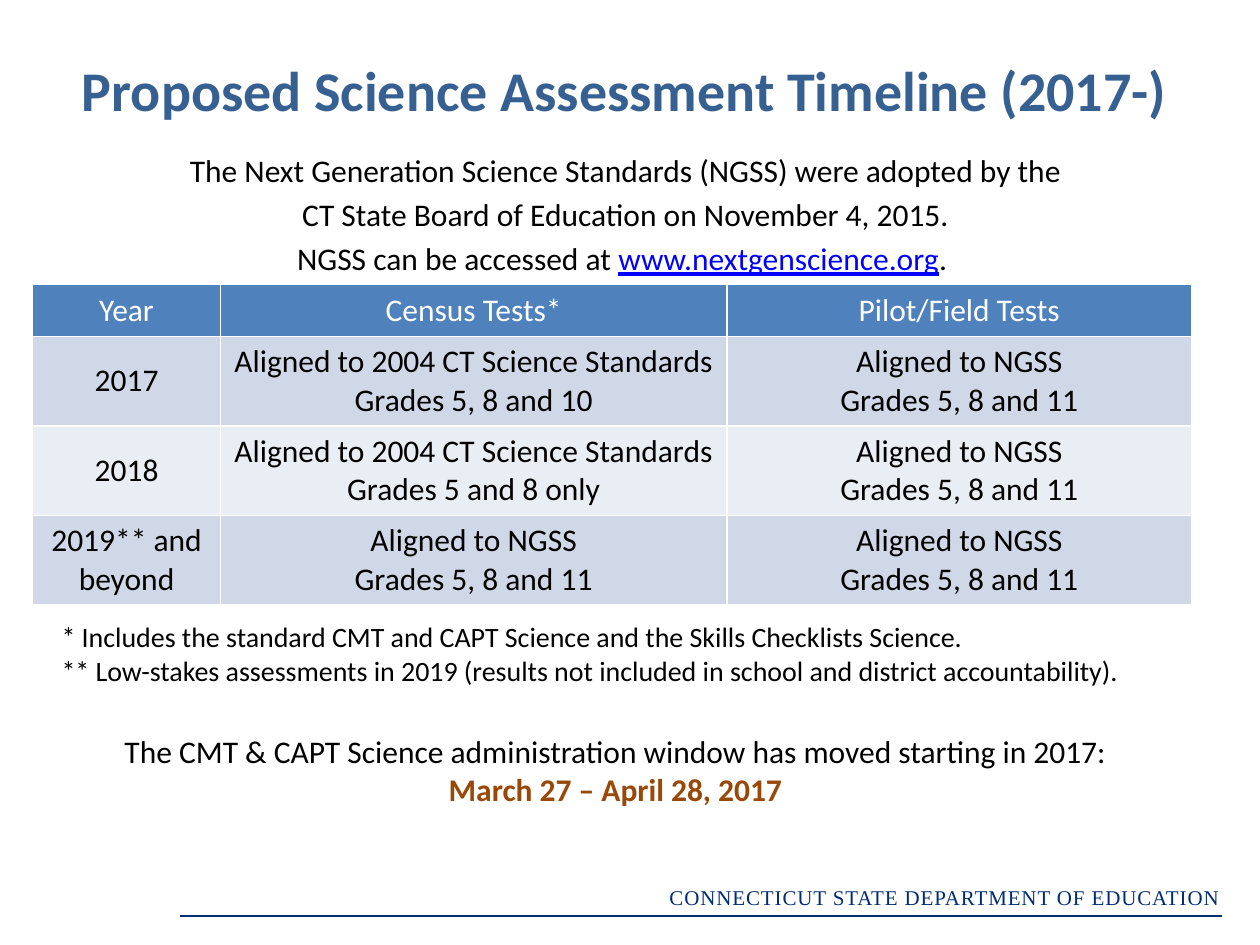
from dataclasses import dataclass

from lxml.etree import SubElement
from pptx import Presentation
from pptx.dml.color import RGBColor
from pptx.enum.shapes import MSO_CONNECTOR
from pptx.enum.text import MSO_ANCHOR, MSO_AUTO_SIZE, PP_ALIGN
from pptx.oxml.ns import qn
from pptx.slide import Slide
from pptx.util import Inches, Pt


@dataclass(frozen=True)
class Theme:
    sans: str = "Calibri"
    serif: str = "Times New Roman"
    title: str = "376092"
    ink: str = "000000"
    link: str = "0000FF"
    accent: str = "984807"
    navy: str = "002D73"
    white: str = "FFFFFF"
    header: str = "4F81BD"
    bands: tuple[str, str] = ("D0D8E8", "E9EDF4")
    title_size: int = 32
    body_size: int = 18
    note_size: int = 16
    footer_size: int = 12


THEME = Theme()


@dataclass(frozen=True)
class Span:
    text: str
    color: str = THEME.ink
    size: int = THEME.body_size
    font: str = THEME.sans
    bold: bool = False
    underline: bool = False
    tracking: float = 0


@dataclass(frozen=True)
class TextBlock:
    left: float
    top: float
    width: float
    height: float
    lines: list[list[Span]]
    align: PP_ALIGN = PP_ALIGN.CENTER
    anchor: MSO_ANCHOR = MSO_ANCHOR.TOP
    wrap: bool = True
    grow: bool = False
    gap: float = 0


BLOCKS = [
    TextBlock(0.46, 0.34, 9, 0.74, [
        [Span("Proposed Science Assessment Timeline (2017-)", THEME.title, THEME.title_size, bold=True)],
    ], anchor=MSO_ANCHOR.MIDDLE),
    TextBlock(0.99, 1.15, 7.95, 0.86, [
        [Span("The Next Generation Science Standards (NGSS) were adopted by the")],
        [Span("CT State Board of Education on November 4, 2015.")],
        [Span("NGSS can be accessed at "),
         Span("www.nextgenscience.org", THEME.link, underline=True),
         Span(". ")],
    ], gap=3.6),
    TextBlock(5.16, 6.97, 4.62, 0.3, [
        [Span("CONNECTICUT STATE DEPARTMENT OF EDUCATION", THEME.navy,
              THEME.footer_size, THEME.serif, tracking=0.5)],
    ], align=PP_ALIGN.RIGHT, grow=True),
    TextBlock(0.84, 5.76, 8.09, 0.71, [
        [Span("The CMT & CAPT Science administration window has moved starting in 2017:")],
        [Span("March 27 – April 28, 2017", THEME.accent, bold=True)],
    ], wrap=False, grow=True),
    TextBlock(0.39, 4.87, 9.2, 0.64, [
        [Span("* Includes the standard CMT and CAPT Science and the Skills Checklists Science.",
              size=THEME.note_size)],
        [Span("** Low-stakes assessments in 2019 (results not included in school and district accountability).",
              size=THEME.note_size)],
    ], align=PP_ALIGN.LEFT, grow=True),
]

OLD_STANDARDS = "Aligned to 2004 CT Science Standards"
NGSS_TESTS = ["Aligned to NGSS", "Grades 5, 8 and 11"]
TABLE_ROWS = [
    [["Year"], ["Census Tests*"], ["Pilot/Field Tests"]],
    [["2017"], [OLD_STANDARDS, "Grades 5, 8 and 10"], NGSS_TESTS],
    [["2018"], [OLD_STANDARDS, "Grades 5 and 8 only"], NGSS_TESTS],
    [["2019** and beyond"], NGSS_TESTS, NGSS_TESTS],
]
COLUMN_WIDTHS = [1.49, 4.02, 3.69]
ROW_HEIGHTS = [0.41, 0.7, 0.7, 0.7]


def write_lines(frame, lines: list[list[Span]], align: PP_ALIGN, gap: float = 0) -> None:
    for index, spans in enumerate(lines):
        para = frame.add_paragraph() if index else frame.paragraphs[0]
        para.alignment = align
        para.space_before = Pt(gap if index else 0)
        for span in spans:
            run = para.add_run()
            run.text = span.text
            formats = {"name": span.font, "size": Pt(span.size),
                       "bold": span.bold, "underline": span.underline}
            for name, value in formats.items():
                setattr(run.font, name, value)
            run.font.color.rgb = RGBColor.from_string(span.color)
            if span.tracking:
                run.font._element.set("spc", str(int(span.tracking * 100)))


def add_text(page: Slide, block: TextBlock) -> None:
    box = page.shapes.add_textbox(*map(Inches, (block.left, block.top, block.width, block.height)))
    formats = {
        "word_wrap": block.wrap,
        "vertical_anchor": block.anchor,
        "auto_size": MSO_AUTO_SIZE.SHAPE_TO_FIT_TEXT if block.grow else MSO_AUTO_SIZE.NONE,
    }
    for name, value in formats.items():
        setattr(box.text_frame, name, value)
    write_lines(box.text_frame, block.lines, block.align, block.gap)


def add_borders(cell, color: str, width: float) -> None:
    properties = cell._tc.get_or_add_tcPr()
    for side in ("lnL", "lnR", "lnT", "lnB"):
        border = SubElement(properties, qn(f"a:{side}"), w=str(Pt(width)))
        fill = SubElement(border, qn("a:solidFill"))
        SubElement(fill, qn("a:srgbClr"), val=color)


def add_timeline(page: Slide, left: float, top: float) -> None:
    table = page.shapes.add_table(
        len(TABLE_ROWS), len(COLUMN_WIDTHS), Inches(left), Inches(top),
        Inches(sum(COLUMN_WIDTHS)), Inches(sum(ROW_HEIGHTS))).table
    for column, width in zip(table.columns, COLUMN_WIDTHS):
        column.width = Inches(width)
    for row_index, (texts, height) in enumerate(zip(TABLE_ROWS, ROW_HEIGHTS)):
        table.rows[row_index].height = Inches(height)
        is_header = row_index == 0
        fill = THEME.header if is_header else THEME.bands[(row_index - 1) % 2]
        ink = THEME.white if is_header else THEME.ink
        for column_index, lines in enumerate(texts):
            cell = table.cell(row_index, column_index)
            add_borders(cell, THEME.white, 1)
            cell.fill.solid()
            cell.fill.fore_color.rgb = RGBColor.from_string(fill)
            is_year = column_index == 0 and not is_header
            cell.vertical_anchor = MSO_ANCHOR.MIDDLE if is_year else MSO_ANCHOR.TOP
            write_lines(cell.text_frame, [[Span(line, ink)] for line in lines], PP_ALIGN.CENTER)


def add_rule(page: Slide, left: float, right: float, top: float) -> None:
    rule = page.shapes.add_connector(
        MSO_CONNECTOR.STRAIGHT, Inches(left), Inches(top), Inches(right), Inches(top))
    rule.line.color.rgb = RGBColor.from_string(THEME.navy)
    rule.line.width = Pt(0.75)
    SubElement(rule._element.spPr, qn("a:effectLst"))


def main() -> None:
    deck = Presentation()
    deck.slide_width, deck.slide_height = Inches(10), Inches(7.5)
    page = deck.slides.add_slide(deck.slide_layouts[6])
    add_rule(page, 1.43, 9.7, 7.27)
    add_timeline(page, 0.26, 2.26)
    for block in BLOCKS:
        add_text(page, block)
    deck.save("out.pptx")


if __name__ == "__main__":
    main()
